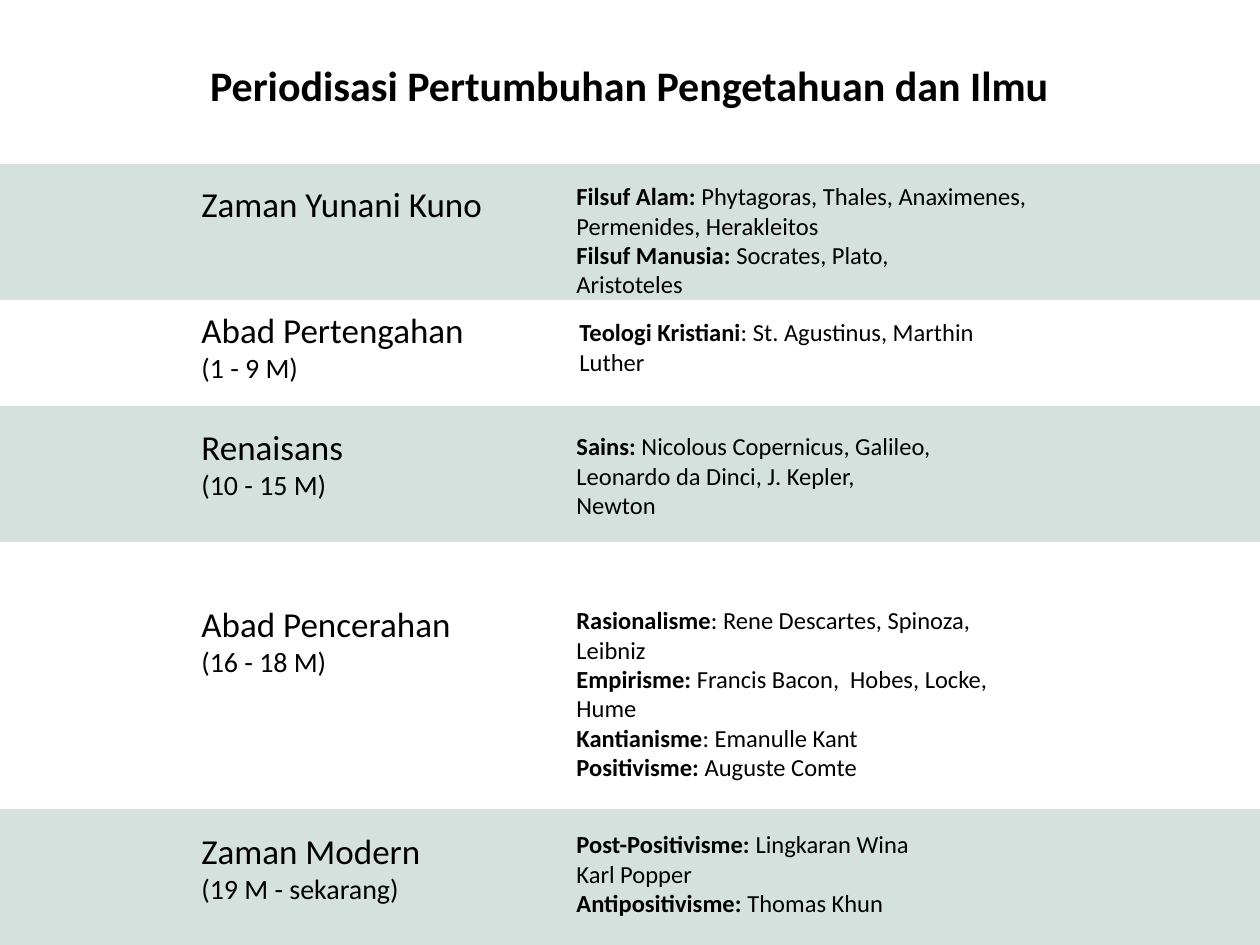
import pptx
import pptx.dml.color
import pptx.enum.shapes
import pptx.enum.text
import pptx.util

PX = 914400 / 126
FONT = "Calibri"
COLORS = {"band": "D5E1DC", "text": "000000"}
SLIDE_WIDTH, SLIDE_HEIGHT = 1260, 945
BAND_HEIGHT = 136
BAND_TOPS = (164, 406, 809)

ERAS = [
    ("Zaman Yunani Kuno", None, 0),
    ("Abad Pertengahan", "(1 - 9 M)", 48),
    ("Renaisans", "(10 - 15 M)", 24),
    ("Abad Pencerahan", "(16 - 18 M)", 57.6),
    ("Zaman Modern", "(19 M - sekarang)", 86.4),
]

SCHOOLS = [
    ((564, 175, 588, 130), [
        ("Filsuf Alam:", " Phytagoras, Thales, Anaximenes, Permenides, Herakleitos"),
        ("Filsuf Manusia:", " Socrates, Plato,"),
        ("", "Aristoteles"),
    ]),
    ((567, 311, 462, 72), [
        ("Teologi Kristiani", ": St. Agustinus, Marthin Luther"),
    ]),
    ((564, 425, 462, 101), [
        ("Sains:", " Nicolous Copernicus, Galileo, Leonardo da Dinci, J. Kepler,"),
        ("", "Newton"),
    ]),
    ((564, 599, 462, 218), [
        ("Rasionalisme", ": Rene Descartes, Spinoza, Leibniz"),
        ("Empirisme:", " Francis Bacon,  Hobes, Locke, Hume"),
        ("Kantianisme", ": Emanulle Kant"),
        ("Positivisme:", " Auguste Comte"),
    ]),
    ((564, 823, 462, 130), [
        ("Post-Positivisme:", " Lingkaran Wina"),
        ("", "Karl Popper"),
        ("Antipositivisme:", " Thomas Khun"),
    ]),
]


def px(length):
    """Turn pixels into EMU."""
    return pptx.util.Emu(round(length * PX))


def color(name):
    """Look up a colour by its role."""
    return pptx.dml.color.RGBColor.from_string(COLORS[name])


def set_font(paragraph, size):
    """Give a paragraph the slide's font at a size."""
    paragraph.font.name = FONT
    paragraph.font.size = pptx.util.Pt(size)
    paragraph.font.color.rgb = color("text")


def add_title(slide, text):
    """Place and format the title."""
    title = slide.shapes.title
    title.left, title.top, title.width, title.height = map(px, (94, 32, 1071, 105))
    title.text_frame.text = text
    title.text_frame.vertical_anchor = pptx.enum.text.MSO_ANCHOR.MIDDLE
    heading = title.text_frame.paragraphs[0]
    heading.alignment = pptx.enum.text.PP_ALIGN.CENTER
    set_font(heading, 24)
    heading.font.bold = True


def add_band(slide, top):
    """Add a full-width tinted band."""
    band = slide.shapes.add_shape(
        pptx.enum.shapes.MSO_SHAPE.RECTANGLE,
        *map(px, (0, top, SLIDE_WIDTH, BAND_HEIGHT)))
    band.shadow.inherit = False
    band.fill.solid()
    band.fill.fore_color.rgb = color("band")
    band.line.fill.background()


def add_text(slide, box, lines):
    """Add a text box of (bold lead, plain rest, size, space before) lines."""
    frame = slide.shapes.add_textbox(*map(px, box)).text_frame
    frame.word_wrap = True
    for index, (lead, rest, size, gap) in enumerate(lines):
        paragraph = frame.add_paragraph() if index else frame.paragraphs[0]
        paragraph.space_before = pptx.util.Pt(gap)
        set_font(paragraph, size)
        if lead:
            lead_run = paragraph.add_run()
            lead_run.text = lead
            lead_run.font.bold = True
        paragraph.add_run().text = rest


def add_eras(slide):
    """Add the column of eras with their centuries."""
    lines = []
    for era, centuries, gap in ERAS:
        lines.append(("", era, 20, gap))
        if centuries:
            lines.append(("", centuries, 16, 0))
    add_text(slide, (189, 176, 344, 736), lines)


def main():
    """Build and save the slide."""
    presentation = pptx.Presentation()
    presentation.slide_width = px(SLIDE_WIDTH)
    presentation.slide_height = px(SLIDE_HEIGHT)
    slide = presentation.slides.add_slide(presentation.slide_layouts[5])
    for top in BAND_TOPS:
        add_band(slide, top)
    add_title(slide, "Periodisasi Pertumbuhan Pengetahuan dan Ilmu")
    add_eras(slide)
    for box, schools in SCHOOLS:
        add_text(slide, box, [(school, thinkers, 14, 0) for school, thinkers in schools])
    presentation.save("out.pptx")


if __name__ == "__main__":
    main()
